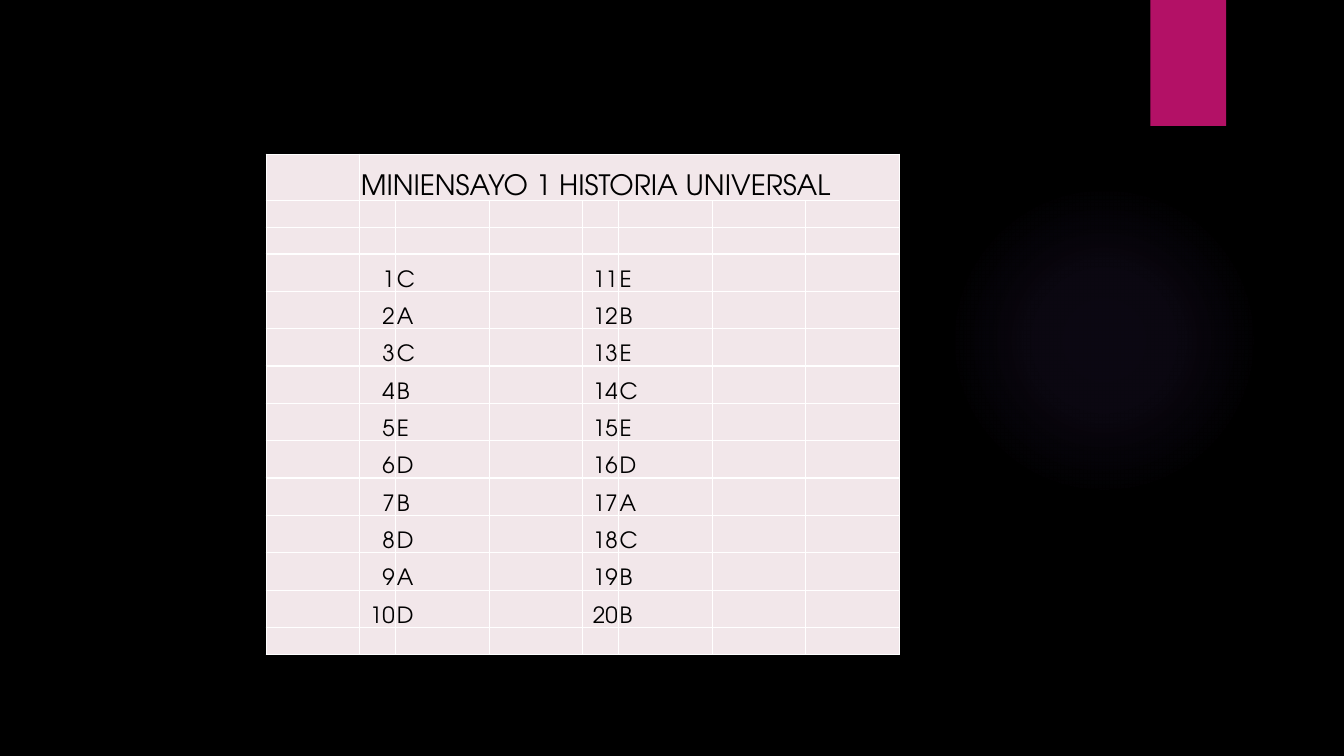
from lxml import etree
from pptx import Presentation
from pptx.dml.color import RGBColor
from pptx.enum.shapes import MSO_SHAPE
from pptx.enum.text import MSO_ANCHOR, PP_ALIGN
from pptx.oxml import parse_xml
from pptx.oxml.ns import qn
from pptx.util import Pt

RECT, OVAL = MSO_SHAPE.RECTANGLE, MSO_SHAPE.OVAL
LEFT, RIGHT, BOTTOM = PP_ALIGN.LEFT, PP_ALIGN.RIGHT, MSO_ANCHOR.BOTTOM

HEADING = "MINIENSAYO 1 HISTORIA UNIVERSAL"
ANSWERS = ["CACBEDBDAD", "EBECEDACBB"]
NUMBER_COLS = [1, 4]
FIRST_ANSWER_ROW = 3
FONT = "TeX Gyre Adventor"
COLORS = {"back": "000000", "text": "000000", "cell": "F2E7EA",
          "grid": "FFFFFF", "tab": "B31166", "glow": "9B6BF2"}
WIDE, NARROW = 66.8, 25.7
COL_WIDTHS = [NARROW if c in NUMBER_COLS else WIDE for c in range(8)]
ROW_HEIGHTS = [33.1] + [19.1] * 2 + [26.7] * 10 + [19.1]
GLOW_STOPS = [(0, 7), (36, 6), (69, 0)]
NS = 'xmlns:a="http://schemas.openxmlformats.org/drawingml/2006/main"'


def rgb(name):
    return RGBColor.from_string(COLORS[name])


def add_plain(kind, *box):
    shape = s.shapes.add_shape(kind, *map(Pt, box))
    shape.shadow.inherit = False
    shape.line.fill.background()
    return shape


def add_glow():
    sp = add_plain(OVAL, 677.5, 131.8, 221.8, 221.8)
    stops = "".join(
        f'<a:gs pos="{pos * 1000}"><a:srgbClr val="{COLORS["glow"]}">'
        f'<a:alpha val="{alpha * 1000}"/></a:srgbClr></a:gs>'
        for pos, alpha in GLOW_STOPS)
    sp._element.spPr.find(qn("a:prstGeom")).addnext(parse_xml(
        f'<a:gradFill {NS} rotWithShape="1"><a:gsLst>{stops}</a:gsLst>'
        '<a:path path="circle"><a:fillToRect l="50000" t="50000" r="50000" b="50000"/>'
        '</a:path></a:gradFill>'))


def style_cell(cell):
    cell.margin_left = cell.margin_right = cell.margin_top = Pt(0.75)
    cell.margin_bottom = Pt(0)
    cell.vertical_anchor = BOTTOM
    cell.fill.solid()
    cell.fill.fore_color.rgb = rgb("cell")
    tcPr = cell._tc.get_or_add_tcPr()
    for i, side in enumerate(("lnL", "lnR", "lnT", "lnB")):
        tcPr.insert(i, parse_xml(
            f'<a:{side} {NS} w="{Pt(1)}"><a:solidFill>'
            f'<a:srgbClr val="{COLORS["grid"]}"/></a:solidFill></a:{side}>'))


def fill_cell(cell, text, size, align):
    p = cell.text_frame.paragraphs[0]
    p.alignment = align
    if not text:
        etree.SubElement(p._p, qn("a:endParaRPr"), sz=str(size * 100))
        return
    r = p.add_run()
    r.text = text
    r.font.name, r.font.size = FONT, Pt(size)
    r.font.color.rgb = rgb("text")


prs = Presentation()
prs.slide_width, prs.slide_height = Pt(960), Pt(540)
s = prs.slides.add_slide(prs.slide_layouts[6])
s.background.fill.solid()
s.background.fill.fore_color.rgb = rgb("back")

add_glow()
tab = add_plain(RECT, 821.8, 0, 54, 90)
tab.fill.solid()
tab.fill.fore_color.rgb = rgb("tab")

texts = {(0, 1): (HEADING, 20, LEFT)}
for block, (col, letters) in enumerate(zip(NUMBER_COLS, ANSWERS)):
    for i, letter in enumerate(letters):
        row = FIRST_ANSWER_ROW + i
        texts[row, col] = (str(block * len(letters) + i + 1), 16, RIGHT)
        texts[row, col + 1] = (letter, 16, LEFT)

table_frame = s.shapes.add_table(
    len(ROW_HEIGHTS), len(COL_WIDTHS), Pt(190.2), Pt(110.2),
    Pt(sum(COL_WIDTHS)), Pt(sum(ROW_HEIGHTS)))
table = table_frame.table
table.first_row = table.horz_banding = False
for column, width in zip(table.columns, COL_WIDTHS):
    column.width = Pt(width)
for r, height in enumerate(ROW_HEIGHTS):
    table.rows[r].height = Pt(height)
    for c in range(len(COL_WIDTHS)):
        style_cell(table.cell(r, c))
        fill_cell(table.cell(r, c), *texts.get((r, c), ("", 10, LEFT)))
table.cell(0, 1).merge(table.cell(0, 7))

prs.save("out.pptx")
